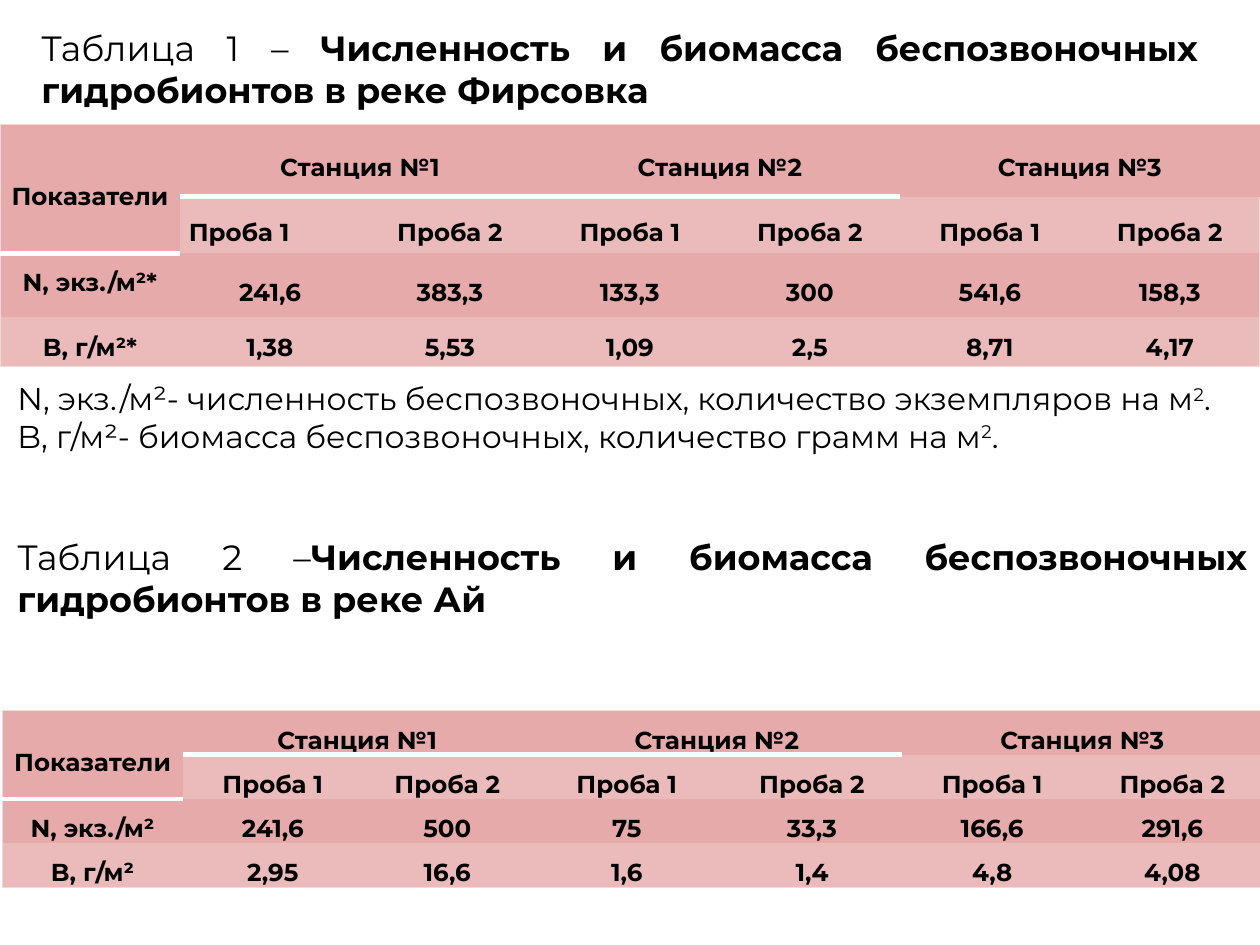
from pptx import Presentation
from pptx.dml.color import RGBColor
from pptx.enum.text import MSO_ANCHOR, MSO_AUTO_SIZE, PP_ALIGN
from pptx.oxml.ns import qn
from pptx.util import Inches, Pt
from lxml import etree

TOP, MIDDLE = MSO_ANCHOR.TOP, MSO_ANCHOR.MIDDLE
CENTER, JUSTIFY = PP_ALIGN.CENTER, PP_ALIGN.JUSTIFY
FIT = MSO_AUTO_SIZE.SHAPE_TO_FIT_TEXT

FONT = "Montserrat"
COLORS = {"text": "000000", "dark": "E6AAAA", "light": "EBBBBB",
          "edge": "EFDADA", "rule": "FFFFFF"}
NO_STYLE = "{2D5ABB26-0587-4C30-8999-92F81FD0307C}"
W, H = Inches(10), Inches(7.5)

HEAD = ["Показатели", "Станция №1", "", "Станция №2", "", "Станция №3", ""]
SAMPLES = [""] + ["Проба 1", "Проба 2"] * 3
SPANS = [(0, 0, 1, 0), (0, 1, 0, 2), (0, 3, 0, 4), (0, 5, 0, 6)]
RULED = [(0, 0), (1, 0), (0, 1), (0, 2), (0, 3), (0, 4)]

TABLES = [
    {"left": 0, "top": 0.99 / 7.5, "cols": [1] * 7,
     "rows": [0.57, 0.45, 0.51, 0.39],
     "top_cells": [(2, 0)] + [(3, c) for c in range(7)],
     "justified": [(1, 1)],
     "data": [
         ["N, экз./м²*", "241,6", "383,3", "133,3", "300", "541,6", "158,3"],
         ["B, г/м²*", "1,38", "5,53", "1,09", "2,5", "8,71", "4,17"]]},
    {"left": 0.002, "top": 5.64 / 7.5, "cols": [1.43, 1.43, 1.34, 1.51, 1.43, 1.43, 1.43],
     "rows": [0.35] * 4,
     "top_cells": [(r, c) for r in range(4) for c in range(7) if (r, c) != (0, 0)],
     "justified": [],
     "data": [
         ["N, экз./м²", "241,6", "500", "75", "33,3", "166,6", "291,6"],
         ["B, г/м²", "2,95", "16,6", "1,6", "1,4", "4,8", "4,08"]]},
]

TEXTS = [
    {"box": (0.023, 0.16 / 7.5, 0.938, 1.08 / 7.5), "paragraphs": [
        (20, 0, [("Таблица 1 – ", ""),
                 ("Численность и биомасса беспозвоночных гидробионтов в реке Фирсовка", "bold")])]},
    {"box": (0.004, 2.96 / 7.5, 0.996, 2.66 / 7.5), "paragraphs": [
        (18, 0, [("N, экз./м²- численность беспозвоночных, количество экземпляров на м", ""),
                 ("2", "super"), (".", "")]),
        (18, 0, [("B, г/м²- биомасса беспозвоночных, количество грамм на м", ""),
                 ("2", "super"), (".", "")]),
        (20, 46, [("Таблица 2 –", ""),
                  ("Численность и биомасса беспозвоночных гидробионтов в реке Ай", "bold")])]},
]


def rgb(name):
    return RGBColor.from_string(COLORS[name])


def set_font(font, size):
    font.name, font.size = FONT, Pt(size)
    font.color.rgb = rgb("text")


def add_border(cell, side, color, width):
    ln = etree.SubElement(cell._tc.get_or_add_tcPr(), qn("a:ln" + side), w=str(Pt(width)))
    fill = etree.SubElement(ln, qn("a:solidFill"))
    etree.SubElement(fill, qn("a:srgbClr"), val=COLORS[color])


def add_text(s, box, paragraphs):
    x, y, w, h = box
    tf = s.shapes.add_textbox(round(x * W), round(y * H), round(w * W), round(h * H)).text_frame
    tf.word_wrap, tf.auto_size = True, FIT
    for i, (size, before, runs) in enumerate(paragraphs):
        p = tf.add_paragraph() if i else tf.paragraphs[0]
        p.alignment = JUSTIFY
        if before:
            p.space_before = Pt(before)
        set_font(p.font, size)
        for text, style in runs:
            r = p.add_run()
            r.text = text
            if style == "bold":
                r.font.bold = True
            elif style == "super":
                r._r.get_or_add_rPr().set("baseline", "30000")


def format_cell(cell, pos, text, t):
    row, col = pos
    cell.margin_left = cell.margin_right = Inches(0.07)
    cell.margin_top = cell.margin_bottom = 0
    cell.vertical_anchor = TOP if pos in t["top_cells"] else MIDDLE
    if col == 0:
        add_border(cell, "L", "edge", 0.75)
    if col == 6:
        add_border(cell, "R", "edge", 0.75)
    if row == 0:
        add_border(cell, "T", "edge", 0.75)
    if pos in RULED:
        add_border(cell, "B", "rule", 3)
    elif row == 3:
        add_border(cell, "B", "edge", 0.75)
    cell.fill.solid()
    cell.fill.fore_color.rgb = rgb("light" if row % 2 and pos != (1, 0) else "dark")
    p = cell.text_frame.paragraphs[0]
    p.alignment = JUSTIFY if pos in t["justified"] else CENTER
    p.line_spacing = 1.5
    set_font(p.font, 14)
    p.font.bold = True
    if text:
        p.add_run().text = text


def add_data_table(s, t):
    height = Inches(sum(t["rows"]))
    frame = s.shapes.add_table(4, 7, round(t["left"] * W), round(t["top"] * H), W, height)
    table = frame.table
    table.first_row = table.horz_banding = False
    table._tbl.tblPr.find(qn("a:tableStyleId")).text = NO_STYLE
    for column, share in zip(table.columns, t["cols"]):
        column.width = round(W * share / sum(t["cols"]))
    for row, size in zip(table.rows, t["rows"]):
        row.height = Inches(size)
    for r, values in enumerate([HEAD, SAMPLES] + t["data"]):
        for c, text in enumerate(values):
            format_cell(table.cell(r, c), (r, c), text, t)
    for r1, c1, r2, c2 in SPANS:
        table.cell(r1, c1).merge(table.cell(r2, c2))


def main():
    prs = Presentation()
    prs.slide_width, prs.slide_height = W, H
    s = prs.slides.add_slide(prs.slide_layouts[6])
    for text, table in zip(TEXTS, TABLES):
        add_text(s, **text)
        add_data_table(s, table)
    prs.save("out.pptx")


if __name__ == "__main__":
    main()
